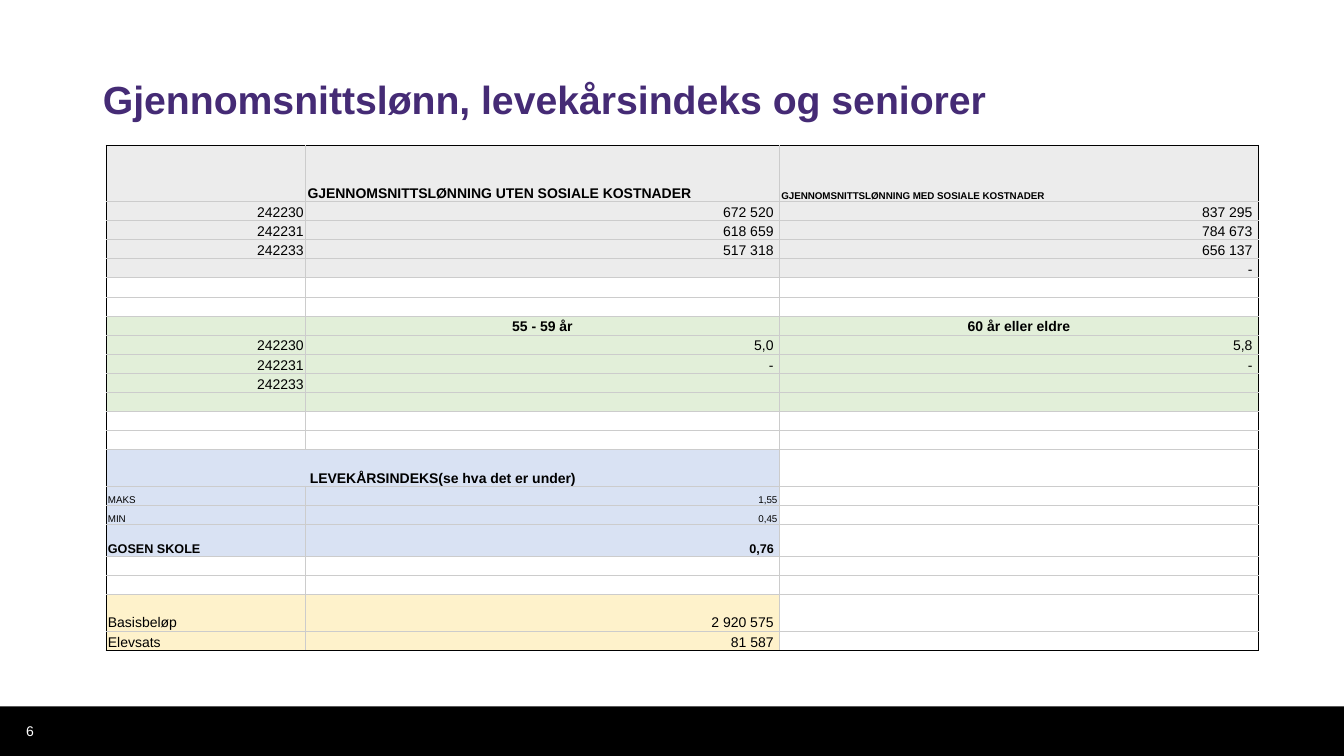
import collections
import dataclasses

import lxml.etree
import pptx
import pptx.dml.color
import pptx.enum.shapes
import pptx.enum.text
import pptx.oxml.ns
import pptx.util

Cm = pptx.util.Cm
Pt = pptx.util.Pt
qn = pptx.oxml.ns.qn
Align = pptx.enum.text.PP_ALIGN
Anchor = pptx.enum.text.MSO_ANCHOR


@dataclasses.dataclass(frozen=True)
class Theme:
    face: str = "Arial"
    title: str = "452B75"
    black: str = "000000"
    white: str = "FFFFFF"
    grid: str = "CCCCCC"
    grey: str = "ECECEC"
    green: str = "E2EFD9"
    blue: str = "D9E2F3"
    gold: str = "FEF2CB"
    head: float = 28
    body: float = 10
    mid: float = 9
    tiny: float = 7
    line: float = 0.5


T = Theme()
SIDES = {"l": Align.LEFT, "c": Align.CENTER, "r": Align.RIGHT}

# A row: fill, its texts, alignment per column, sizes per column, weight, height
Row = collections.namedtuple("Row", "fill texts align sizes bold high")


def row(fill=None, texts=("", "", ""), align="rrr", size=T.body, last=None,
        bold=False, high=0.48):
    return Row(fill, texts, align, (size, size, last or size), bold, high)


ROWS = [
    # Average pay
    row(T.grey, ("", "GJENNOMSNITTSLØNNING UTEN SOSIALE KOSTNADER",
                 "GJENNOMSNITTSLØNNING MED SOSIALE KOSTNADER"),
        "lll", last=T.tiny, bold=True, high=1.42),
    row(T.grey, ("242230", "672 520 ", "837 295 ")),
    row(T.grey, ("242231", "618 659 ", "784 673 ")),
    row(T.grey, ("242233", "517 318 ", "656 137 ")),
    row(T.grey, ("", "", "- ")),
    row(),
    row(),
    # Seniors
    row(T.green, ("", "55 - 59 år", "60 år eller eldre"), "ccc", bold=True),
    row(T.green, ("242230", "5,0 ", "5,8 ")),
    row(T.green, ("242231", "- ", "- ")),
    row(T.green, ("242233", "", "")),
    row(T.green),
    row(),
    row(),
    # Living conditions index
    row(T.blue, ("LEVEKÅRSINDEKS(se hva det er under)", "", ""), "ccc",
        bold=True, high=0.93),
    row(T.blue, ("MAKS", "1,55", ""), "lrr", T.tiny),
    row(T.blue, ("MIN", "0,45", ""), "lrr", T.tiny),
    row(T.blue, ("GOSEN SKOLE", "0,76 ", ""), "lrr", T.mid, bold=True,
        high=0.8),
    row(),
    row(),
    # Base amounts
    row(T.gold, ("Basisbeløp", "2 920 575 ", ""), "lrr", high=0.93),
    row(T.gold, ("Elevsats", "81 587 ", ""), "lrr"),
]
WIDTHS = (5.03, 11.94, 12.07)
MERGED = 14
NARROW = (T.blue, T.gold)  # these fills stop before the last column


def rgb(code):
    return pptx.dml.color.RGBColor.from_string(code)


def style(para, size, color, bold=False, align=Align.LEFT):
    para.alignment = align
    font = para.font
    font.name, font.size, font.bold = T.face, Pt(size), bold
    font.color.rgb = rgb(color)


def border(cell, edges):
    props = cell._tc.get_or_add_tcPr()
    for side in "LRTB":
        line = lxml.etree.SubElement(props, qn(f"a:ln{side}"),
                                     w=str(Pt(T.line)))
        fill = lxml.etree.SubElement(line, qn("a:solidFill"))
        lxml.etree.SubElement(fill, qn("a:srgbClr"),
                              val=T.black if side in edges else T.grid)


def write(cell, text, size, bold, align):
    cell.margin_left = cell.margin_right = Cm(0.05)
    cell.margin_top = cell.margin_bottom = 0
    cell.vertical_anchor = Anchor.BOTTOM
    para = cell.text_frame.paragraphs[0]
    if text:
        para.text = text
    else:  # keeps an empty cell from stretching its row
        lxml.etree.SubElement(para._p, qn("a:endParaRPr"),
                              sz=str(int(size * 100)))
    style(para, size, T.black, bold, align)


def add_grid(slide):
    frame = slide.shapes.add_table(
        len(ROWS), len(WIDTHS), Cm(2.67), Cm(3.66),
        Cm(sum(WIDTHS)), Cm(sum(item.high for item in ROWS)))
    table = frame.table
    table.first_row = table.horz_banding = False
    for col, wide in zip(table.columns, WIDTHS):
        col.width = Cm(wide)
    end = len(WIDTHS) - 1
    for r, item in enumerate(ROWS):
        table.rows[r].height = Cm(item.high)
        for c, text in enumerate(item.texts):
            cell = table.cell(r, c)
            write(cell, text, item.sizes[c], item.bold, SIDES[item.align[c]])
            outer = {"L": c == 0, "R": c == end,
                     "T": r == 0, "B": r == len(ROWS) - 1}
            border(cell, [side for side, on in outer.items() if on])
            if item.fill and not (c == end and item.fill in NARROW):
                cell.fill.solid()
                cell.fill.fore_color.rgb = rgb(item.fill)
            else:
                cell.fill.background()
    table.cell(MERGED, 0).merge(table.cell(MERGED, 1))


def add_title(slide, text):
    title = slide.shapes.title
    title.left, title.top = Cm(2.34), Cm(1.37)
    title.width, title.height = Cm(29.36), Cm(1.85)
    title.text_frame.text = text
    title.text_frame.vertical_anchor = Anchor.BOTTOM
    para = title.text_frame.paragraphs[0]
    para.line_spacing = 0.9
    style(para, T.head, T.title, True)


def add_foot(slide, number, wide):
    bar = slide.shapes.add_shape(pptx.enum.shapes.MSO_SHAPE.RECTANGLE,
                                 0, Cm(17.8), wide, Cm(1.25))
    bar.shadow.inherit = False
    bar.fill.solid()
    bar.fill.fore_color.rgb = rgb(T.black)
    bar.line.fill.background()
    box = slide.shapes.add_textbox(Cm(0.41), Cm(17.91), Cm(1.32), Cm(1.02))
    frame = box.text_frame
    frame.word_wrap = True
    frame.vertical_anchor = Anchor.MIDDLE
    frame.text = number
    style(frame.paragraphs[0], T.body, T.white)


def main():
    deck = pptx.Presentation()
    deck.slide_width, deck.slide_height = Cm(33.87), Cm(19.05)
    slide = deck.slides.add_slide(deck.slide_layouts[5])
    add_foot(slide, "6", deck.slide_width)
    add_title(slide, "Gjennomsnittslønn, levekårsindeks og seniorer")
    add_grid(slide)
    deck.save("out.pptx")


if __name__ == "__main__":
    main()
